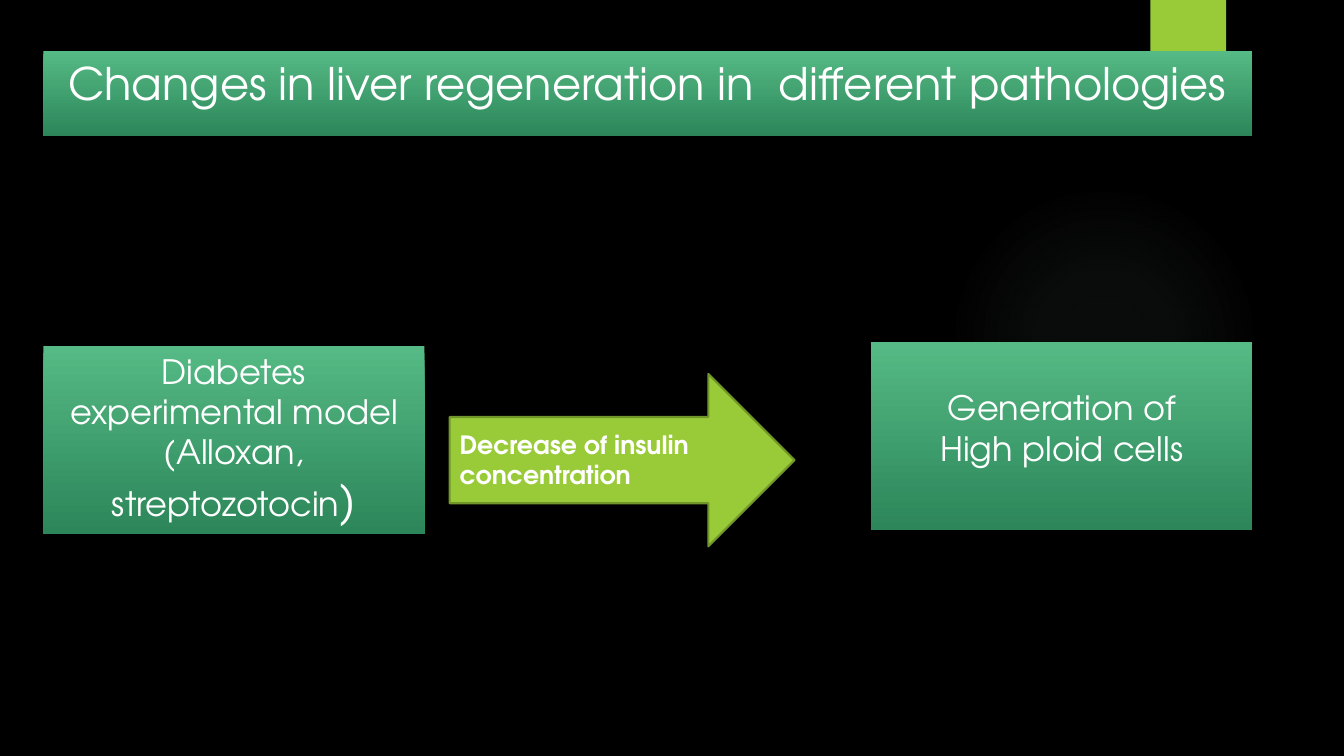
from dataclasses import dataclass

from lxml import etree
from pptx import Presentation
from pptx.dml.color import RGBColor
from pptx.enum.shapes import MSO_SHAPE
from pptx.enum.text import MSO_ANCHOR, PP_ALIGN
from pptx.oxml import parse_xml
from pptx.oxml.ns import nsdecls, qn
from pptx.util import Inches, Pt

RECT, OVAL, ARROW = MSO_SHAPE.RECTANGLE, MSO_SHAPE.OVAL, MSO_SHAPE.RIGHT_ARROW
TOP, CENTER = MSO_ANCHOR.TOP, PP_ALIGN.CENTER

BLACK = RGBColor(0x00, 0x00, 0x00)
WHITE = RGBColor(0xFF, 0xFF, 0xFF)
LIME = RGBColor(0x99, 0xCB, 0x38)
LIME_EDGE = RGBColor(0x71, 0x96, 0x29)
GREEN_TOP = RGBColor(0x55, 0xBA, 0x85)
GREEN_BOTTOM = RGBColor(0x2C, 0x86, 0x59)
GLOW = RGBColor(0x87, 0xA8, 0x96)
GLOW_STOPS = ((0, 7), (36, 6), (69, 0))  # position %, opacity %

FONT = "TeX Gyre Adventor"
W, H = Inches(13.33), Inches(7.5)


@dataclass
class Area:
    """Place and size in percent of the slide's width and height."""
    left: float
    top: float
    width: float
    height: float

    def emu(self) -> tuple:
        return (int(W * self.left / 100), int(H * self.top / 100),
                int(W * self.width / 100), int(H * self.height / 100))


@dataclass
class Panel:
    area: Area
    lines: tuple  # one tuple of (text, size) runs per paragraph
    inset_top: float = 0.05


LEFT, TOTAL_WIDTH, BOX_WIDTH, BOX_HEIGHT = 3.23, 89.95, 28.36, 24.93
PANELS = (
    Panel(Area(LEFT, 6.73, TOTAL_WIDTH, 11.3),
          ((("Changes in liver regeneration in  different pathologies", 32),),)),
    Panel(Area(LEFT, 45.73, BOX_WIDTH, BOX_HEIGHT),
          ((("Diabetes experimental model", 24),),
           (("(Alloxan, streptozotocin", 24), (")", 32)))),
    Panel(Area(LEFT + TOTAL_WIDTH - BOX_WIDTH, 45.2, BOX_WIDTH, BOX_HEIGHT),
          ((("Generation of", 24),), (("High ploid cells", 24),)), 0.45),
)


def add_plain(slide, kind, area: Area, color: RGBColor):
    sp = slide.shapes.add_shape(kind, *area.emu())
    sp.shadow.inherit = False
    sp.fill.solid()
    sp.fill.fore_color.rgb = color
    sp.line.fill.background()
    return sp


def add_glow(slide, area: Area) -> None:
    sp = add_plain(slide, OVAL, area, GLOW)
    stops = "".join(
        f'<a:gs pos="{pos * 1000}"><a:srgbClr val="{GLOW}">'
        f'<a:alpha val="{alpha * 1000}"/></a:srgbClr></a:gs>'
        for pos, alpha in GLOW_STOPS)
    props = sp.fill._xPr
    props.replace(props.find(qn("a:solidFill")), parse_xml(
        f'<a:gradFill {nsdecls("a")}><a:gsLst>{stops}</a:gsLst>'
        '<a:path path="circle"><a:fillToRect l="50000" t="50000" '
        'r="50000" b="50000"/></a:path></a:gradFill>'))


def add_panel(slide, panel: Panel) -> None:
    sp = add_plain(slide, RECT, panel.area, GREEN_TOP)
    sp.fill.gradient()
    sp.fill.gradient_angle = 270
    for stop, color in zip(sp.fill.gradient_stops, (GREEN_TOP, GREEN_BOTTOM)):
        stop.color.rgb = color
    tf = sp.text_frame
    tf.word_wrap = True
    tf.vertical_anchor = TOP
    tf.margin_top = Inches(panel.inset_top)
    for i, line in enumerate(panel.lines):
        p = tf.add_paragraph() if i else tf.paragraphs[0]
        p.alignment = CENTER
        p.font.name = FONT
        p.font.color.rgb = WHITE
        for text, size in line:
            r = p.add_run()
            r.text = text
            r.font.size = Pt(size)


def add_arrow(slide) -> None:
    sp = add_plain(slide, ARROW, Area(33.46, 49.47, 25.66, 22.8), LIME)
    sp.line.color.rgb = LIME_EDGE
    sp.line.width = Pt(1.5)
    tf = slide.shapes.add_textbox(*Area(33.46, 56.13, 21.3, 9.47).emu()).text_frame
    tf.word_wrap = True
    p = tf.paragraphs[0]
    p.text = "Decrease of insulin concentration"
    p.font.name = FONT
    p.font.size = Pt(18)
    p.font.bold = True
    p.font.color.rgb = WHITE


def main() -> None:
    prs = Presentation()
    prs.slide_width, prs.slide_height = W, H
    s = prs.slides.add_slide(prs.slide_layouts[6])

    # Backdrop
    s.background.fill.solid()
    s.background.fill.fore_color.rgb = BLACK
    add_glow(s, Area(70.59, 24.4, 23.11, 41.07))
    add_plain(s, RECT, Area(85.6, 0, 5.63, 16.67), LIME)

    # Title, cause, arrow and effect
    title, cause, effect = PANELS
    add_panel(s, title)
    add_panel(s, cause)
    add_arrow(s)
    add_panel(s, effect)

    prs.save("out.pptx")


if __name__ == "__main__":
    main()
